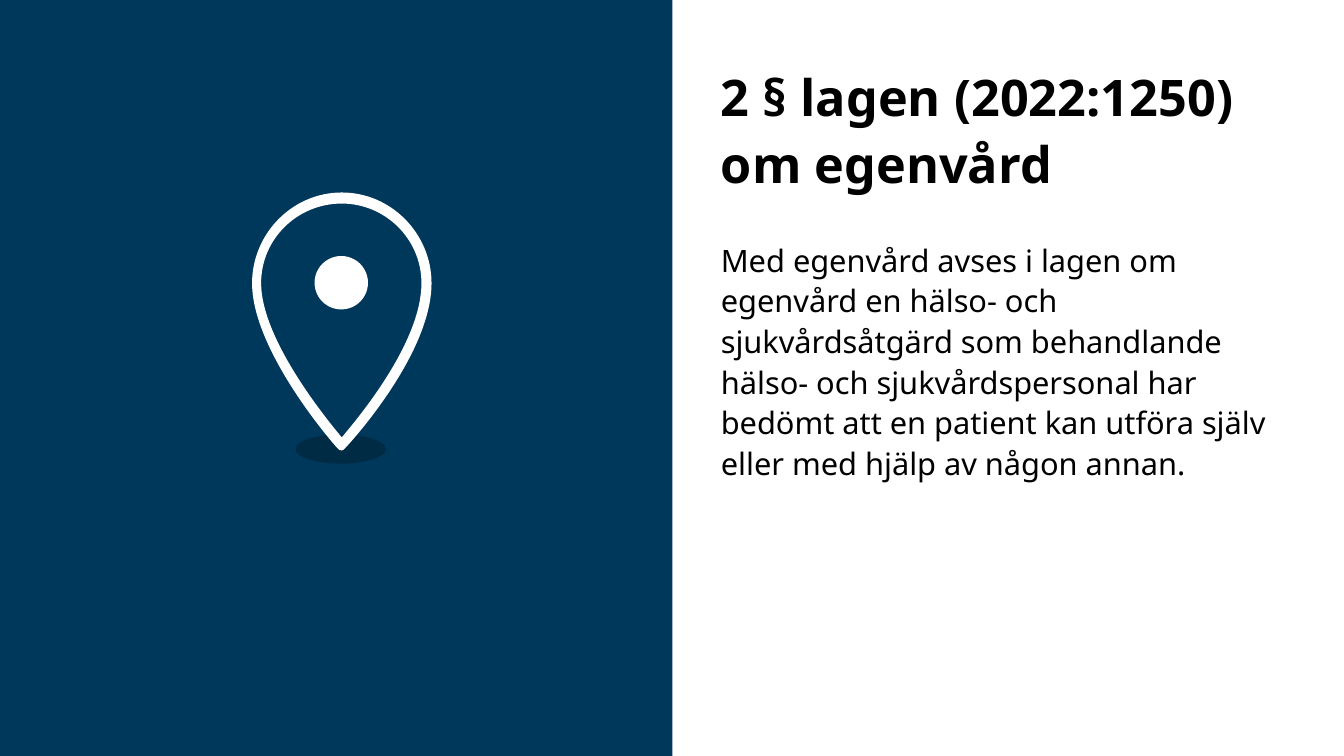
"""Build a slide defining self-care, with a map pin on a dark panel."""
from dataclasses import dataclass

from lxml import etree
from pptx import Presentation
from pptx.dml.color import RGBColor
from pptx.enum.shapes import MSO_SHAPE
from pptx.oxml.ns import qn
from pptx.util import Inches, Pt


@dataclass(frozen=True)
class Theme:
    font: str = "Noto Sans"
    panel: RGBColor = RGBColor(0x00, 0x38, 0x5C)
    pin_shadow: RGBColor = RGBColor(0x00, 0x2B, 0x45)
    pin: RGBColor = RGBColor(0xFF, 0xFF, 0xFF)
    text: RGBColor = RGBColor(0x00, 0x00, 0x00)
    title_size: Pt = Pt(36)
    body_size: Pt = Pt(22)
    line_spacing: float = 1.1


def paint(shape, color):
    shape.shadow.inherit = False
    shape.fill.solid()
    shape.fill.fore_color.rgb = color
    shape.line.fill.background()


theme = Theme()
presentation = Presentation()
presentation.slide_width = Inches(13.33)
presentation.slide_height = Inches(7.5)
slide = presentation.slides.add_slide(presentation.slide_layouts[6])

texts = [
    ("2 § lagen (2022:1250) om egenvård", 0.6, 5.43, 1.35, theme.title_size, True),
    ("Med egenvård avses i lagen om egenvård en hälso- och sjukvårdsåtgärd som behandlande "
     "hälso- och sjukvårdspersonal har bedömt att en patient kan utföra själv eller med hjälp "
     "av någon annan.", 2.36, 5.44, 4.43, theme.body_size, False),
]
for text, top, width, height, size, bold in texts:
    box = slide.shapes.add_textbox(Inches(7.15), Inches(top), Inches(width), Inches(height))
    frame = box.text_frame
    frame.word_wrap = True
    frame.margin_left = frame.margin_top = frame.margin_right = frame.margin_bottom = 0
    paragraph = frame.paragraphs[0]
    paragraph.text = text
    paragraph.line_spacing = theme.line_spacing
    paragraph.font.name = theme.font
    paragraph.font.size = size
    paragraph.font.bold = bold
    paragraph.font.color.rgb = theme.text

panel = slide.shapes.add_shape(MSO_SHAPE.RECTANGLE, 0, 0, Inches(6.67), Inches(7.5))
paint(panel, theme.panel)
pin_shadow = slide.shapes.add_shape(
    MSO_SHAPE.OVAL, Inches(2.93), Inches(4.31), Inches(0.9), Inches(0.29))
paint(pin_shadow, theme.pin_shadow)

pin = slide.shapes.add_group_shape()
pin_dot = pin.shapes.add_shape(
    MSO_SHAPE.OVAL, Inches(3.12), Inches(2.54), Inches(0.53), Inches(0.53))
paint(pin_dot, theme.pin)

pin_left, pin_top = 2.5, 1.91
outer_start = (3.39, 1.91)
outer_curves = [
    ((2.9, 1.91), (2.5, 2.32), (2.5, 2.81)),
    ((2.5, 3.48), (3.31, 4.41), (3.35, 4.45)),
    ((3.36, 4.46), (3.37, 4.47), (3.39, 4.47)),
    ((3.4, 4.47), (3.41, 4.46), (3.42, 4.45)),
    ((3.46, 4.41), (4.28, 3.52), (4.28, 2.81)),
    ((4.28, 2.32), (3.88, 1.91), (3.39, 1.91)),
]
inner_start = (3.39, 4.34)
inner_curves = [
    ((3.23, 4.15), (2.59, 3.36), (2.59, 2.81)),
    ((2.59, 2.37), (2.95, 2.02), (3.39, 2.02)),
    ((3.82, 2.02), (4.18, 2.37), (4.18, 2.81)),
    ((4.18, 3.4), (3.55, 4.15), (3.39, 4.34)),
]
builder = pin.shapes.build_freeform(
    Inches(outer_start[0]), Inches(outer_start[1]))
builder.add_line_segments([(Inches(x), Inches(y)) for *_, (x, y) in outer_curves])
builder.move_to(Inches(inner_start[0]), Inches(inner_start[1]))
builder.add_line_segments([(Inches(x), Inches(y)) for *_, (x, y) in inner_curves])
pin_outline = builder.convert_to_shape()
paint(pin_outline, theme.pin)

segments = pin_outline._element.xpath(".//a:pathLst/a:path/*[self::a:lnTo]")
for segment, curve in zip(segments, outer_curves + inner_curves):
    bezier = etree.Element(qn("a:cubicBezTo"))
    for x, y in curve:
        etree.SubElement(bezier, qn("a:pt"), x=str(Inches(x) - Inches(pin_left)),
                         y=str(Inches(y) - Inches(pin_top)))
    segment.getparent().replace(segment, bezier)

presentation.save("out.pptx")
